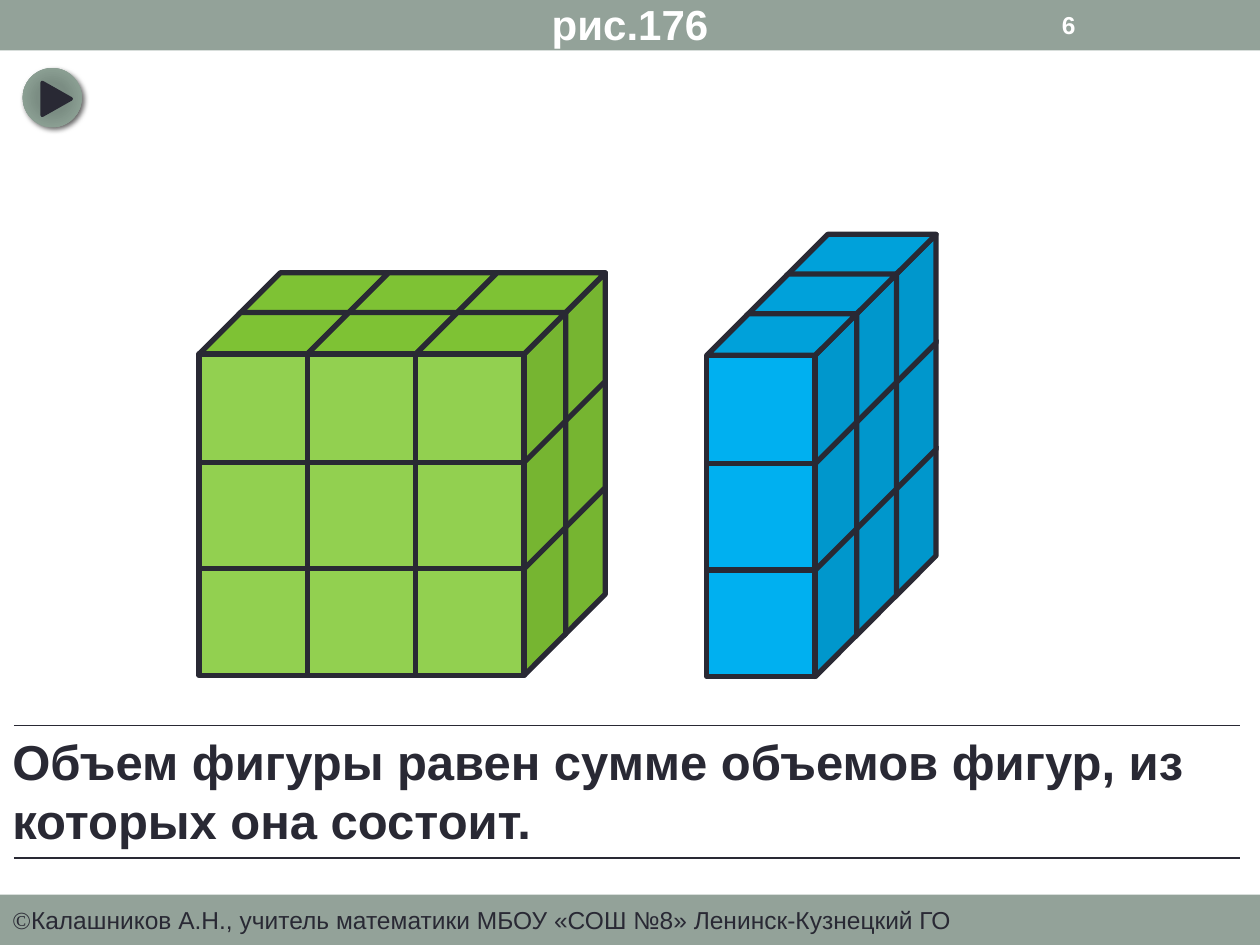
from dataclasses import dataclass

import pptx
import pptx.dml.color
import pptx.enum.shapes
import pptx.enum.text
import pptx.oxml
import pptx.util
from pptx.util import Inches

SHAPE = pptx.enum.shapes.MSO_SHAPE
ANCHOR = pptx.enum.text.MSO_ANCHOR
DRAWING_NS = 'xmlns:a="http://schemas.openxmlformats.org/drawingml/2006/main"'


@dataclass(frozen=True)
class Theme:
    band: str = "93A299"
    ink: str = "292934"
    white: str = "FFFFFF"
    green: tuple = ("92D050", "7EC234", "76B531")  # front, top, side
    blue: tuple = ("00B0F0", "00A1DA", "0097CC")
    button: tuple = ((0, "7B8E82"), (34, "7B8D83"), (70, "8A9E92"), (100, "93A299"))
    font: str = "Arial"
    symbol_font: str = "Times New Roman"
    small: int = 14
    title: int = 24
    body: int = 28
    edge: float = 3
    rule: float = 0.75


THEME = Theme()
EDGE = 0.86    # edge of a cube's front face
SLANT = 0.33   # horizontal and vertical run of a receding edge
STEP = 0.86    # distance between columns
RISE = 0.845   # distance between rows
DEPTH = 0.315  # offset between layers


def rgb(code):
    return pptx.dml.color.RGBColor.from_string(code)


def paint(shape, fill, line=None, width=THEME.edge):
    shape.shadow.inherit = False
    shape.fill.solid()
    shape.fill.fore_color.rgb = rgb(fill)
    if line:
        shape.line.color.rgb = rgb(line)
        shape.line.width = pptx.util.Pt(width)
    else:
        shape.line.fill.background()


def set_font(font, size, color, bold=False, name=THEME.font):
    font.name = name
    font.size = pptx.util.Pt(size)
    font.bold = bold
    font.color.rgb = rgb(color)


def add_band(page, top):
    band = page.shapes.add_shape(SHAPE.RECTANGLE, 0, Inches(top), Inches(10), Inches(0.4))
    paint(band, THEME.band)
    return band


def add_footer(page):
    frame = add_band(page, 7.1).text_frame
    frame.vertical_anchor = ANCHOR.MIDDLE
    para = frame.paragraphs[0]
    para.alignment = pptx.enum.text.PP_ALIGN.LEFT
    for text, name in (
        ("©", THEME.symbol_font),
        ("Калашников А.Н., учитель математики МБОУ «СОШ №8» Ленинск-Кузнецкий ГО", THEME.font),
    ):
        span = para.add_run()
        span.text = text
        set_font(span.font, THEME.small, THEME.ink, name=name)


def add_title(page, text):
    title = page.shapes.title
    title.left, title.top = 0, Inches(-0.06)
    title.width, title.height = Inches(10), Inches(0.5)
    frame = title.text_frame
    frame.text = text
    frame.auto_size = pptx.enum.text.MSO_AUTO_SIZE.NONE
    frame.vertical_anchor = ANCHOR.TOP
    set_font(frame.paragraphs[0].font, THEME.title, THEME.white, bold=True)
    title.element.getparent().append(title.element)  # above the header band


def add_text(page, text, left, top, width, height, size, color, anchor=ANCHOR.TOP):
    box = page.shapes.add_textbox(Inches(left), Inches(top), Inches(width), Inches(height))
    frame = box.text_frame
    frame.word_wrap = True
    frame.vertical_anchor = anchor
    frame.text = text
    set_font(frame.paragraphs[0].font, size, color, bold=True)


def add_face(group, points, fill):
    corners = [(Inches(x), Inches(y)) for x, y in points]
    builder = group.shapes.build_freeform(*corners[0])
    builder.add_line_segments(corners[1:], close=True)
    paint(builder.convert_to_shape(), fill, THEME.ink)


def add_cube(page, x, y, colors):
    front, top, side = colors
    right, back, far = x + EDGE, y - SLANT, x + EDGE + SLANT
    group = page.shapes.add_group_shape()
    add_face(group, [(right, y), (far, back), (far, back + EDGE), (right, y + EDGE)], side)
    add_face(group, [(x, y), (x + SLANT, back), (far, back), (right, y)], top)
    face = group.shapes.add_shape(
        SHAPE.RECTANGLE, Inches(x), Inches(y), Inches(EDGE), Inches(EDGE))
    paint(face, front, THEME.ink)


def add_block(page, left, top, columns, rows, layers, colors):
    """Stack cubes from the bottom row up and from the back layer forward."""
    for row in reversed(range(rows)):
        for layer in reversed(range(layers)):
            for column in range(columns):
                add_cube(page, left + column * STEP + layer * DEPTH,
                         top + row * RISE - layer * DEPTH, colors)


def add_rule(page, y):
    rule = page.shapes.add_connector(
        pptx.enum.shapes.MSO_CONNECTOR.STRAIGHT,
        Inches(0.11), Inches(y), Inches(9.84), Inches(y))
    rule.line.color.rgb = rgb(THEME.ink)
    rule.line.width = pptx.util.Pt(THEME.rule)
    rule.element.spPr.append(pptx.oxml.parse_xml(f"<a:effectLst {DRAWING_NS}/>"))


def add_play_button(page):
    group = page.shapes.add_group_shape()
    disc = group.shapes.add_shape(
        SHAPE.OVAL, Inches(0.18), Inches(0.54), Inches(0.47), Inches(0.47))
    disc.line.fill.background()
    stops = "".join(
        f'<a:gs pos="{position * 1000}"><a:srgbClr val="{color}"/></a:gs>'
        for position, color in THEME.button)
    gradient = pptx.oxml.parse_xml(
        f'<a:gradFill {DRAWING_NS}><a:gsLst>{stops}</a:gsLst><a:path path="circle">'
        '<a:fillToRect l="100000" t="100000" r="100000" b="100000"/></a:path></a:gradFill>')
    shadow = pptx.oxml.parse_xml(
        f'<a:effectLst {DRAWING_NS}><a:outerShdw blurRad="38100" dist="25400" dir="2700000">'
        '<a:srgbClr val="000000"><a:alpha val="60000"/></a:srgbClr>'
        '</a:outerShdw></a:effectLst>')
    properties = disc.element.spPr
    properties.prstGeom.addnext(gradient)
    properties.append(shadow)
    arrow = group.shapes.add_shape(
        SHAPE.ISOSCELES_TRIANGLE, Inches(0.32), Inches(0.67), Inches(0.26), Inches(0.23))
    arrow.rotation = 90
    paint(arrow, THEME.ink, THEME.ink, 2.08)


def main():
    deck = pptx.Presentation()
    deck.slide_width, deck.slide_height = Inches(10), Inches(7.5)
    page = deck.slides.add_slide(deck.slide_layouts.get_by_name("Title Only"))
    add_band(page, 0)
    add_footer(page)
    add_block(page, 1.58, 2.81, columns=3, rows=3, layers=2, colors=THEME.green)
    add_block(page, 5.61, 2.82, columns=1, rows=3, layers=3, colors=THEME.blue)
    add_title(page, "рис.176")
    add_text(page, "Объем фигуры равен сумме объемов фигур, из которых она состоит.",
             0, 5.76, 10, 1.04, THEME.body, THEME.ink)
    for y in (5.76, 6.81):
        add_rule(page, y)
    add_play_button(page)
    add_text(page, "6", 8.33, 0.02, 1.17, 0.36, THEME.small, THEME.white, ANCHOR.MIDDLE)
    deck.save("out.pptx")


if __name__ == "__main__":
    main()
